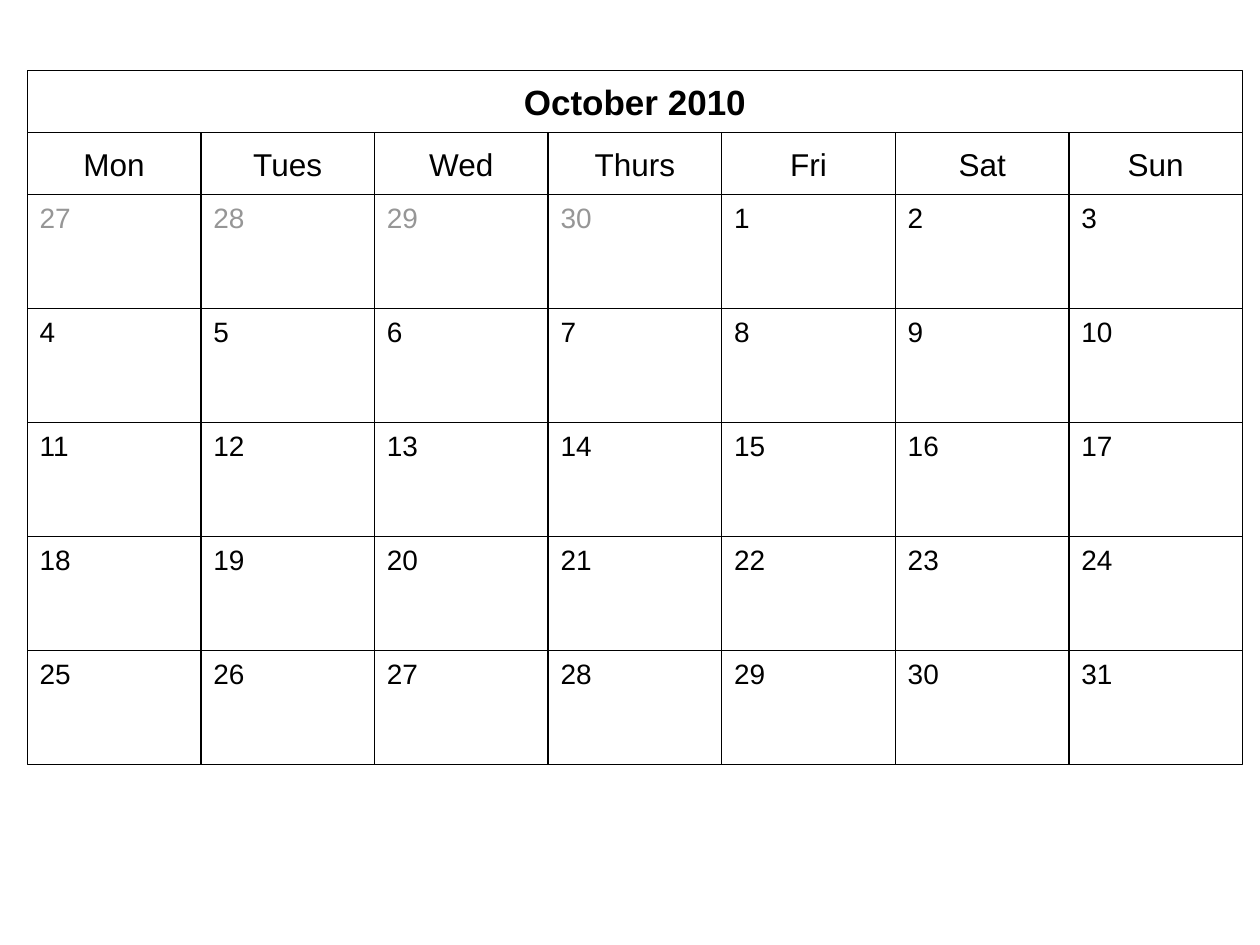
from pptx import Presentation
from pptx import util as u
from pptx.dml.color import RGBColor
from pptx.enum import shapes, text

COLORS = {"paper": "FFFFFF", "ink": "000000", "other_month": "969696"}
WEEKDAYS = ["Mon", "Tues", "Wed", "Thurs", "Fri", "Sat", "Sun"]
DAYS = list(range(27, 31)) + list(range(1, 32))
LEADING_DAYS = 4

# Calendar grid, in centimetres
LEFT, TOP = 0.55, 1.42
COLUMN_WIDTH, HEADER_HEIGHT, WEEK_HEIGHT = 3.5, 1.25, 2.3
WEEKS_TOP = TOP + 2 * HEADER_HEIGHT


def add_cell(left, top, width, height, label, size, color="ink", header=False, bold=False):
    """Add one bordered calendar box; headers are white and centred."""
    shape = slide.shapes.add_shape(
        shapes.MSO_SHAPE.RECTANGLE, u.Cm(left), u.Cm(top), u.Cm(width), u.Cm(height))
    shape.shadow.inherit = False
    shape.line.color.rgb = RGBColor.from_string(COLORS["ink"])
    shape.line.width = u.Pt(0.75)
    frame = shape.text_frame
    frame.word_wrap = True
    paragraph = frame.paragraphs[0]
    if header:
        shape.fill.solid()
        shape.fill.fore_color.rgb = RGBColor.from_string(COLORS["paper"])
        frame.margin_top = frame.margin_bottom = u.Cm(0.05)
        frame.vertical_anchor = text.MSO_ANCHOR.MIDDLE
        paragraph.alignment = text.PP_ALIGN.CENTER
    else:
        shape.fill.background()
        frame.vertical_anchor = text.MSO_ANCHOR.TOP
        paragraph.alignment = text.PP_ALIGN.LEFT
    run = paragraph.add_run()
    run.text = label
    run.font.name = "Arial"
    run.font.size = u.Pt(size)
    run.font.bold = bold
    run.font.color.rgb = RGBColor.from_string(COLORS[color])


presentation = Presentation()
presentation.slide_width = u.Cm(25.4)
presentation.slide_height = u.Cm(19.05)
slide = presentation.slides.add_slide(presentation.slide_layouts[6])

for column, weekday in enumerate(WEEKDAYS):
    add_cell(LEFT + column * COLUMN_WIDTH, TOP + HEADER_HEIGHT,
             COLUMN_WIDTH, HEADER_HEIGHT, weekday, 18, header=True)

add_cell(LEFT, TOP, len(WEEKDAYS) * COLUMN_WIDTH, HEADER_HEIGHT,
         "October 2010", 20, header=True, bold=True)

for index, day in enumerate(DAYS):
    week, column = divmod(index, len(WEEKDAYS))
    color = "other_month" if index < LEADING_DAYS else "ink"
    add_cell(LEFT + column * COLUMN_WIDTH, WEEKS_TOP + week * WEEK_HEIGHT,
             COLUMN_WIDTH, WEEK_HEIGHT, str(day), 16, color)

presentation.save("out.pptx")
